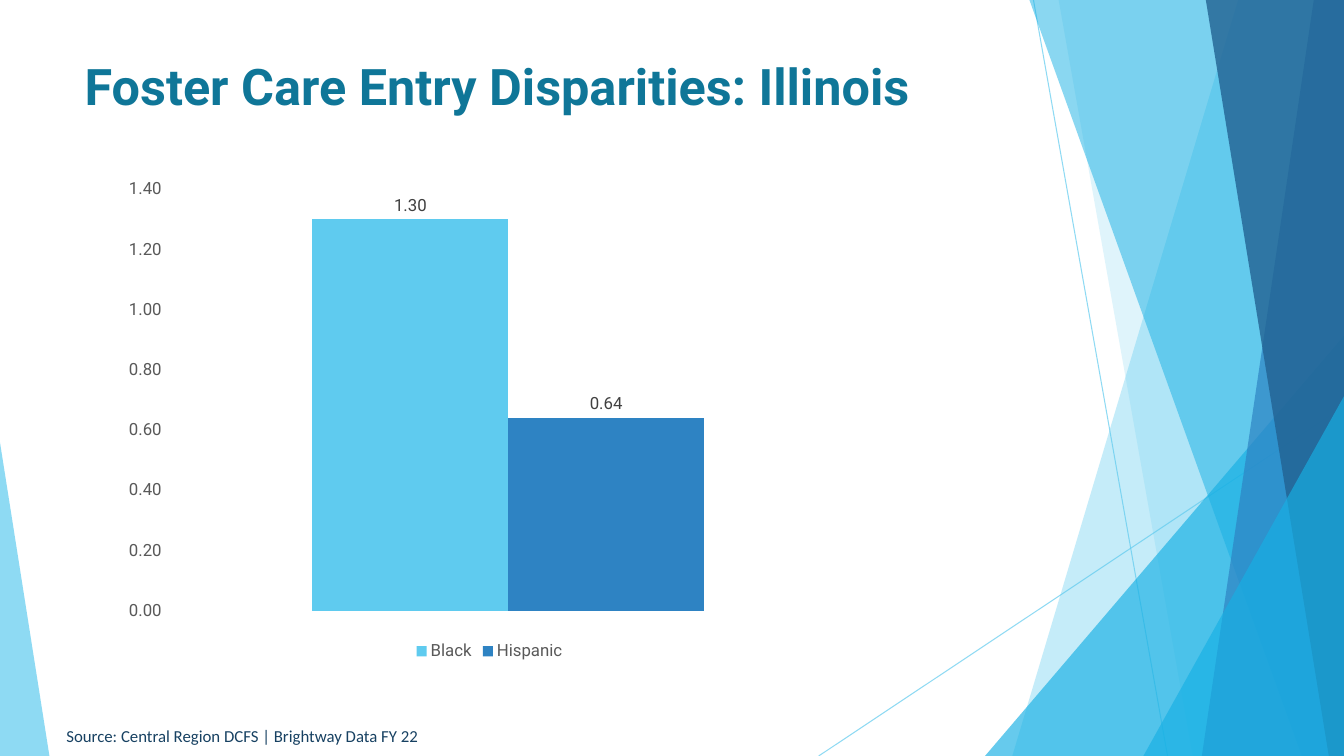
from lxml import etree
from pptx import Presentation
from pptx.chart.data import CategoryChartData
from pptx.dml.color import RGBColor
from pptx.enum.chart import XL_CHART_TYPE, XL_LABEL_POSITION, XL_LEGEND_POSITION, XL_TICK_MARK
from pptx.enum.shapes import MSO_CONNECTOR, MSO_SHAPE
from pptx.enum.text import MSO_ANCHOR
from pptx.oxml import parse_xml
from pptx.oxml.ns import nsdecls, qn
from pptx.util import Inches, Pt

COLUMNS = XL_CHART_TYPE.COLUMN_CLUSTERED
OUTSIDE_END = XL_LABEL_POSITION.OUTSIDE_END
BOTTOM = XL_LEGEND_POSITION.BOTTOM
NO_TICKS = XL_TICK_MARK.NONE
STRAIGHT = MSO_CONNECTOR.STRAIGHT
TRIANGLE = MSO_SHAPE.ISOSCELES_TRIANGLE
MIDDLE, TOP = MSO_ANCHOR.MIDDLE, MSO_ANCHOR.TOP

SKY = RGBColor(0x5F, 0xCB, 0xEF)
CYAN = RGBColor(0x17, 0xB0, 0xE4)
BLUE = RGBColor(0x2E, 0x83, 0xC3)
NAVY = RGBColor(0x22, 0x62, 0x92)
TEAL = RGBColor(0x0F, 0x76, 0x98)
INK = RGBColor(0x17, 0x41, 0x62)
GREY = RGBColor(0x59, 0x59, 0x59)
DARK_GREY = RGBColor(0x40, 0x40, 0x40)

WIDTH, HEIGHT = 13.33, 7.5
HEADING_FONT, SOURCE_FONT = "Roboto", "Calibri"


def set_opacity(fill_owner, percent):
    """Make the solid colour inside a shape or line partly transparent."""
    colour = next(fill_owner.iter(qn("a:srgbClr")))
    etree.SubElement(colour, qn("a:alpha")).set("val", str(percent * 1000))


def paint(shape, colour, opacity):
    shape.shadow.inherit = False
    shape.fill.solid()
    shape.fill.fore_color.rgb = colour
    shape.line.fill.background()
    set_opacity(shape.element.spPr, opacity)


def add_ray(page, start, end):
    ray = page.shapes.add_connector(STRAIGHT, *map(Inches, start + end))
    ray.line.color.rgb = SKY
    ray.line.width = Pt(0.75)
    set_opacity(ray.element.spPr, 70)
    etree.SubElement(ray.element.spPr, qn("a:effectLst"))


def add_facet(page, top_left, bottom_left, colour, opacity):
    """Full-height panel with a slanted left edge, reaching the right margin."""
    builder = page.shapes.build_freeform(Inches(top_left), 0)
    corners = [(WIDTH, 0), (WIDTH, HEIGHT), (bottom_left, HEIGHT)]
    builder.add_line_segments([(Inches(x), Inches(y)) for x, y in corners])
    paint(builder.convert_to_shape(), colour, opacity)


def add_corner(page, left, top, width, apex, colour, opacity):
    """Right triangle standing on the bottom edge of the slide."""
    corner = page.shapes.add_shape(
        TRIANGLE, Inches(left), Inches(top), Inches(width), Inches(HEIGHT - top))
    corner.adjustments[0] = apex
    paint(corner, colour, opacity)


def style_font(font, size, colour, name=HEADING_FONT, bold=False):
    font.size = Pt(size)
    font.name = name
    font.bold = bold
    font.color.rgb = colour


def add_text(page, text, place, anchor, size, colour, name, bold=False):
    box = page.shapes.add_textbox(*map(Inches, place))
    frame = box.text_frame
    frame.word_wrap = True
    frame.vertical_anchor = anchor
    frame.text = text
    style_font(frame.paragraphs[0].runs[0].font, size, colour, name, bold)


def add_entry_chart(page, place):
    data = CategoryChartData(number_format="0.00")
    data.categories = ["1"]
    data.add_series("Black", [1.3])
    data.add_series("Hispanic", [0.64])
    chart = page.shapes.add_chart(COLUMNS, *map(Inches, place), data).chart
    chart.has_title = False
    style_font(chart.font, 12, GREY)

    # Axes
    chart.category_axis.visible = False
    axis = chart.value_axis
    axis.has_major_gridlines = False
    axis.minimum_scale, axis.maximum_scale, axis.major_unit = 0, 1.4, 0.2
    axis.major_tick_mark = axis.minor_tick_mark = NO_TICKS
    axis.format.line.fill.background()
    axis.tick_labels.number_format = "0.00"
    axis.tick_labels.number_format_is_linked = False
    style_font(axis.tick_labels.font, 12, GREY)

    # Columns and their values
    plot = chart.plots[0]
    plot.vary_by_categories = False
    plot.gap_width, plot.overlap = 150, 0
    for series, colour in zip(plot.series, (SKY, BLUE)):
        series.format.fill.solid()
        series.format.fill.fore_color.rgb = colour
        labels = series.data_labels
        labels.show_value = True
        labels.position = OUTSIDE_END
        labels.number_format = "0.00"
        labels.number_format_is_linked = False
        style_font(labels.font, 12, DARK_GREY)

    # Legend
    chart.has_legend = True
    chart.legend.position = BOTTOM
    chart.legend.include_in_layout = False
    style_font(chart.legend.font, 12, GREY)

    # Plot area, as fractions of the chart
    area = next(chart.element.iter(qn("c:plotArea")))
    for layout in area.findall(qn("c:layout")):
        area.remove(layout)
    sizes = "".join(f'<c:{key} val="{value}"/>' for key, value in
                    (("x", 0.07), ("y", 0.04), ("w", 0.91), ("h", 0.85)))
    area.insert(0, parse_xml(
        f'<c:layout {nsdecls("c")}><c:manualLayout><c:layoutTarget val="inner"/>'
        f'<c:xMode val="edge"/><c:yMode val="edge"/>{sizes}'
        '</c:manualLayout></c:layout>'))


def add_backdrop(page):
    add_ray(page, (10.25, 0), (11.58, HEIGHT))
    add_ray(page, (WIDTH, 4.03), (8.12, HEIGHT))
    add_facet(page, 12.28, 10.04, SKY, 36)
    add_facet(page, 10.5, 11.83, SKY, 20)
    add_corner(page, 9.77, 3.33, 3.56, 1, CYAN, 66)
    add_facet(page, 10.21, 12.91, CYAN, 50)
    add_facet(page, 13.03, 11.92, BLUE, 70)
    add_facet(page, 11.96, 13.18, NAVY, 80)
    add_corner(page, 11.34, 3.93, 1.99, 1, CYAN, 66)
    add_corner(page, 0, 4.39, 0.49, 0, SKY, 70)


def main():
    deck = Presentation()
    deck.slide_width, deck.slide_height = Inches(WIDTH), Inches(HEIGHT)
    page = deck.slides.add_slide(deck.slide_layouts[6])
    add_backdrop(page)
    add_text(page, "Foster Care Entry Disparities: Illinois",
             (0.74, 0.41, 9.4, 0.87), MIDDLE, 36, TEAL, HEADING_FONT, bold=True)
    add_entry_chart(page, (1.12, 1.68, 7.47, 4.92))
    add_text(page, "Source: Central Region DCFS | Brightway Data FY 22",
             (0.56, 7.15, 3.76, 0.3), TOP, 12, INK, SOURCE_FONT)
    deck.save("out.pptx")


if __name__ == "__main__":
    main()
